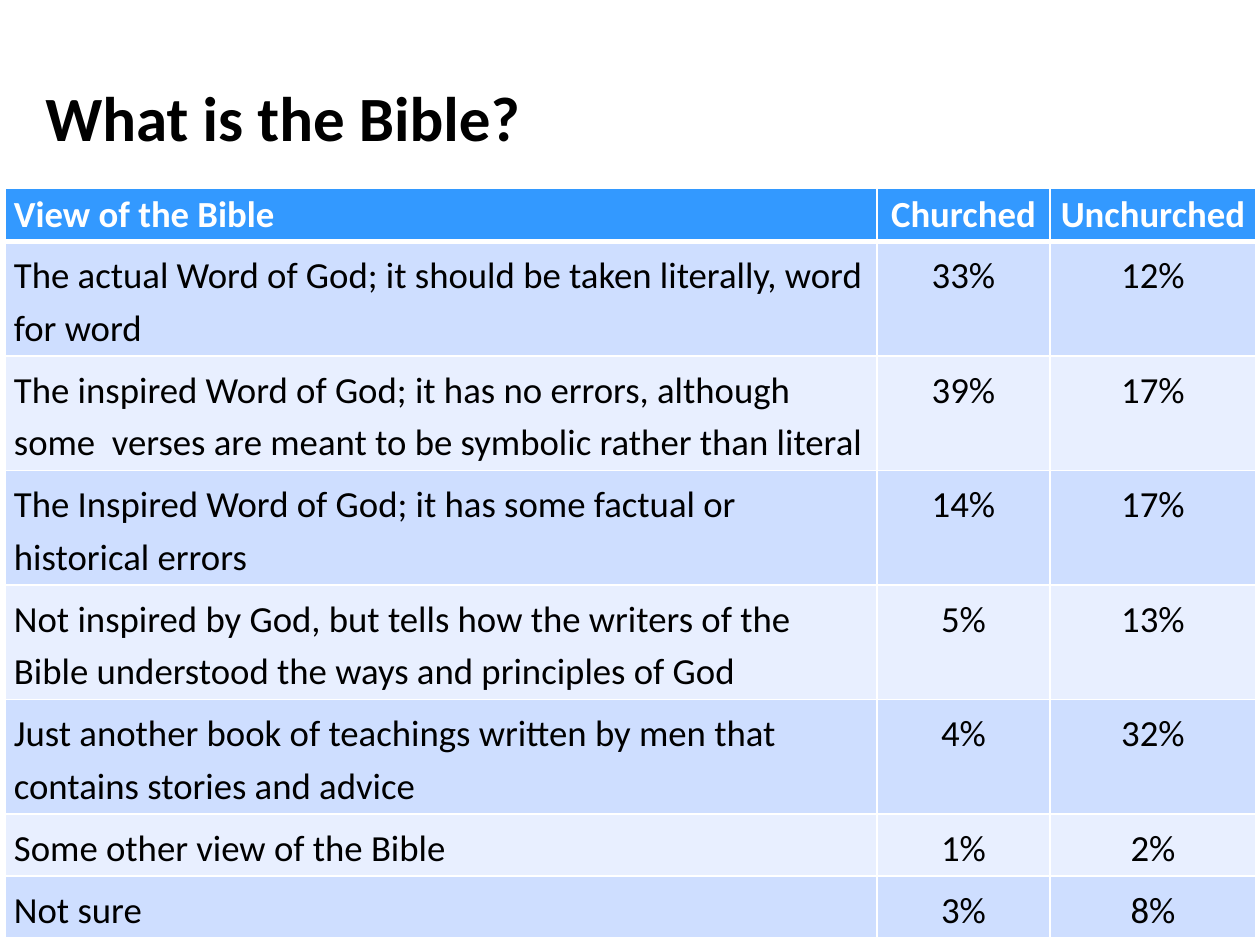
import lxml.etree
import pptx
import pptx.dml.color
import pptx.enum.text
import pptx.oxml.ns
import pptx.util

Pt = pptx.util.Pt
ALIGN = pptx.enum.text.PP_ALIGN
FONT = "Calibri"
HEADINGS = ("View of the Bible", "Churched", "Unchurched")
VIEWS = (
    ("The actual Word of God; it should be taken literally, word for word", "33%", "12%"),
    ("The inspired Word of God; it has no errors, although some  verses are meant "
     "to be symbolic rather than literal", "39%", "17%"),
    ("The Inspired Word of God; it has some factual or historical errors", "14%", "17%"),
    ("Not inspired by God, but tells how the writers of the Bible understood the ways "
     "and principles of God", "5%", "13%"),
    ("Just another book of teachings written by men that contains stories and advice",
     "4%", "32%"),
    ("Some other view of the Bible", "1%", "2%"),
    ("Not sure", "3%", "8%"),
)
COLUMN_SHARES = (0.697, 0.138, 0.165)
ROW_HEIGHTS = (30.2,) + (65.4,) * 5 + (35.4,) * 2


def color(hex_code):
    return pptx.dml.color.RGBColor.from_string(hex_code)


def set_font(paragraph, size, hex_code, bold):
    font = paragraph.font
    font.name, font.size, font.bold = FONT, Pt(size), bold
    font.color.rgb = color(hex_code)


def add_borders(cell, hex_code, widths):
    qn = pptx.oxml.ns.qn
    properties = cell._tc.get_or_add_tcPr()
    for position, (side, width) in enumerate(widths.items()):
        border = lxml.etree.Element(qn(f"a:ln{side}"), w=str(Pt(width)))
        fill = lxml.etree.SubElement(border, qn("a:solidFill"))
        lxml.etree.SubElement(fill, qn("a:srgbClr"), val=hex_code)
        properties.insert(position, border)


def place_title(slide, left, top, width, height):
    title = slide.shapes.title
    title.left, title.top, title.width, title.height = map(Pt, (left, top, width, height))
    title.text_frame.vertical_anchor = pptx.enum.text.MSO_ANCHOR.MIDDLE
    title.text_frame.text = "What is the Bible?"
    heading = title.text_frame.paragraphs[0]
    heading.alignment = ALIGN.LEFT
    heading.line_spacing = 0.9
    set_font(heading, 36, "000000", True)


def fill_cell(cell, text, row, column):
    is_header = row == 0
    cell.margin_left = cell.margin_right = Pt(5.1)
    cell.margin_top = cell.margin_bottom = Pt(2.6)
    cell.text = text
    paragraph = cell.text_frame.paragraphs[0]
    paragraph.alignment = ALIGN.CENTER if column else ALIGN.LEFT
    if not is_header:
        paragraph.line_spacing = Pt(30)
    set_font(paragraph, 21, "FFFFFF" if is_header else "000000", is_header)
    cell.fill.solid()
    band = "CEDEFF" if row % 2 else "E8EFFF"
    cell.fill.fore_color.rgb = color("3399FF" if is_header else band)
    add_borders(cell, "FFFFFF", {"L": 1, "R": 1, "T": 3 if row == 1 else 1,
                                 "B": 3 if is_header else 1})


def place_views_table(slide, left, top, width, height):
    entries = (HEADINGS,) + VIEWS
    table = slide.shapes.add_table(len(entries), len(HEADINGS),
                                   *map(Pt, (left, top, width, height))).table
    for column, share in zip(table.columns, COLUMN_SHARES):
        column.width = Pt(width * share)
    for row, row_height in zip(table.rows, ROW_HEIGHTS):
        row.height = Pt(row_height)
    for row, texts in enumerate(entries):
        for column, text in enumerate(texts):
            fill_cell(table.cell(row, column), text, row, column)


def main():
    presentation = pptx.Presentation()
    presentation.slide_width, presentation.slide_height = Pt(720), Pt(540)
    slide = presentation.slides.add_slide(presentation.slide_layouts[5])
    place_title(slide, 18.7, 30.2, 685.4, 78.5)
    place_views_table(slide, 2.9, 107.3, 715, sum(ROW_HEIGHTS))
    presentation.save("out.pptx")


if __name__ == "__main__":
    main()
